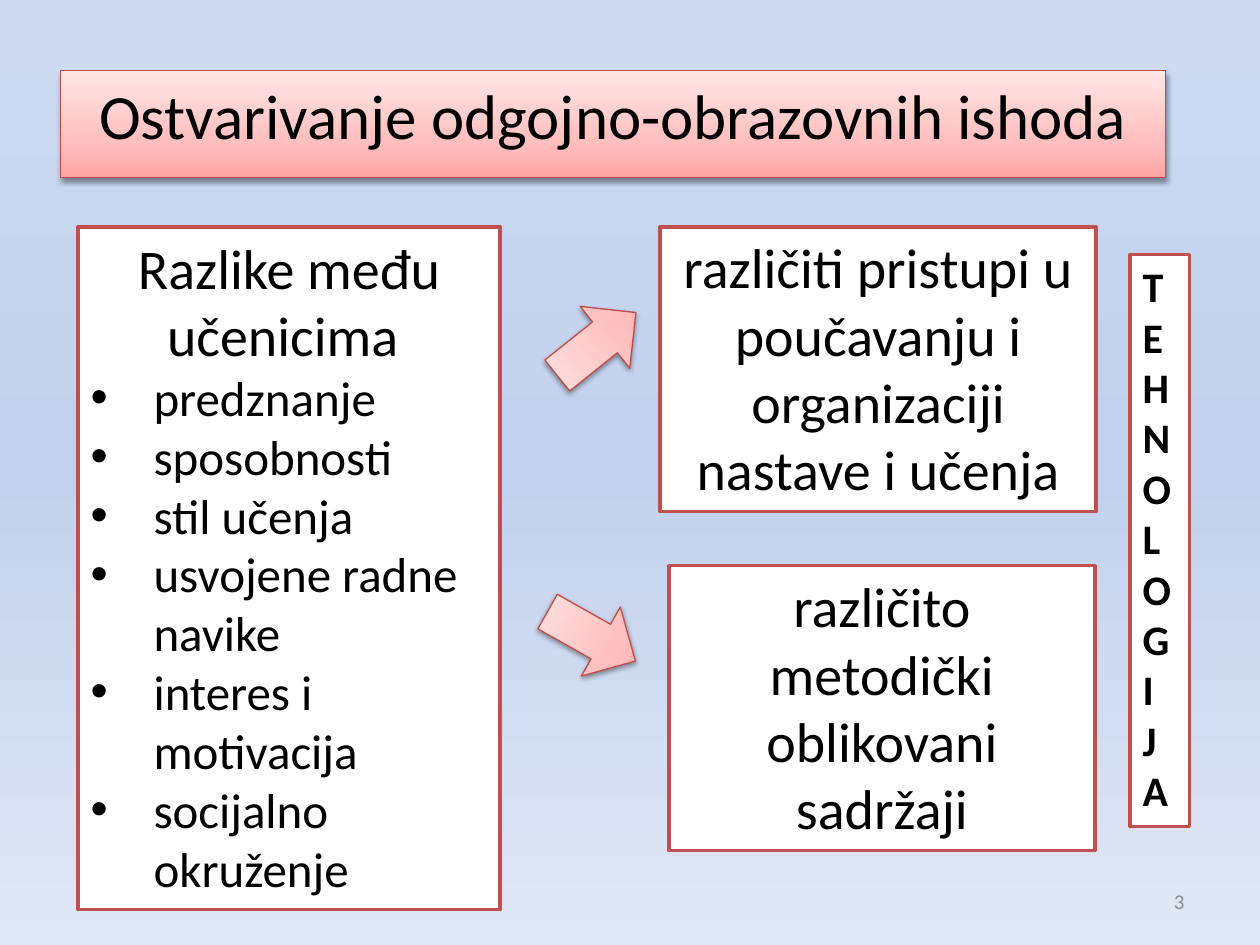
from dataclasses import dataclass
from typing import Optional

from lxml import etree
from pptx import Presentation
from pptx.dml.color import RGBColor
from pptx.enum import shapes, text
from pptx.oxml import parse_xml
from pptx.oxml.ns import nsdecls, qn
from pptx.util import Inches, Pt

Align = text.PP_ALIGN
Kind = shapes.MSO_SHAPE


@dataclass(frozen=True)
class Theme:
    font: str = "Calibri"
    ink: str = "000000"
    gray: str = "8C8C8C"
    white: str = "FFFFFF"
    red: str = "C0504D"
    edge: str = "BF4C48"
    pink: tuple = ((0, "FFA6A5"), (35, "FFC0BF"), (100, "FFE7E7"))
    sky: tuple = ((0, "CDDAF2"), (50, "C2D1ED"), (100, "E1E8F5"))
    title: int = 36
    head: int = 32
    item: int = 28
    side: int = 24
    small: int = 12


@dataclass(frozen=True)
class Box:
    left: float
    top: float
    width: float
    height: float

    def place(self) -> tuple:
        return tuple(map(Inches, (self.left, self.top, self.width, self.height)))


@dataclass(frozen=True)
class Panel:
    box: Box
    words: str
    size: int
    align: Align = Align.CENTER
    bold: bool = False
    items: tuple = ()


@dataclass(frozen=True)
class Arrow:
    box: Box
    turn: float


THEME = Theme()

PANELS = (
    Panel(Box(0.62, 1.8, 3.35, 5.42), "Razlike među učenicima ", THEME.head,
          items=("predznanje", "sposobnosti", "stil učenja", "usvojene radne navike",
                 "interes i motivacija", "socijalno okruženje")),
    Panel(Box(5.31, 4.49, 3.38, 2.26), "različito metodički oblikovani sadržaji", THEME.head),
    Panel(Box(5.24, 1.8, 3.46, 2.26),
          "različiti pristupi u poučavanju i organizaciji nastave i učenja", THEME.head),
    Panel(Box(8.97, 2.02, 0.47, 4.54), "TEHNOLOGI JA", THEME.side, Align.LEFT, True),
)
ARROWS = (
    Arrow(Box(4.42, 2.33, 0.63, 0.8), 231.3),
    Arrow(Box(4.38, 4.65, 0.63, 0.8), 299.4),
)


def blend(root, stops: tuple, angle: int) -> None:
    """Swap the first solid fill under root for a gradient."""
    marks = "".join(f'<a:gs pos="{pos * 1000}"><a:srgbClr val="{tint}"/></a:gs>'
                    for pos, tint in stops)
    solid = root.find(".//" + qn("a:solidFill"))
    solid.getparent().replace(solid, parse_xml(
        f'<a:gradFill {nsdecls("a")} rotWithShape="1"><a:gsLst>{marks}</a:gsLst>'
        f'<a:lin ang="{angle * 60000}" scaled="0"/></a:gradFill>'))


def shade(shape) -> None:
    """Add a soft shadow below the shape."""
    glow = shape._element.spPr.find(qn("a:effectLst"))
    glow.append(parse_xml(
        f'<a:outerShdw {nsdecls("a")} blurRad="{Pt(3.1)}" dist="{Pt(1.6)}" '
        'dir="5400000" rotWithShape="0"><a:srgbClr val="000000">'
        '<a:alpha val="38000"/></a:srgbClr></a:outerShdw>'))


def draw(slide, box: Box, kind: Kind = Kind.RECTANGLE, *, line: str, width: float):
    shape = slide.shapes.add_shape(kind, *box.place())
    shape.shadow.inherit = False
    shape.fill.solid()
    shape.fill.fore_color.rgb = RGBColor.from_string(THEME.white)
    shape.line.color.rgb = RGBColor.from_string(line)
    shape.line.width = Pt(width)
    return shape


def glossy(slide, box: Box, kind: Kind = Kind.RECTANGLE):
    shape = draw(slide, box, kind, line=THEME.edge, width=0.75)
    blend(shape._element.spPr, THEME.pink, 270)
    shade(shape)
    return shape


def write(shape, words: str, *, size: int, align: Align = Align.LEFT, bold: bool = False,
          color: str = THEME.ink, bullet: Optional[str] = None, more: bool = False,
          anchor: text.MSO_ANCHOR = text.MSO_ANCHOR.TOP) -> None:
    frame = shape.text_frame
    frame.word_wrap = True
    frame.vertical_anchor = anchor
    para = frame.add_paragraph() if more else frame.paragraphs[0]
    para.alignment = align
    run = para.add_run()
    run.text = words
    run.font.name = THEME.font
    run.font.size = Pt(size)
    run.font.bold = bold
    run.font.color.rgb = RGBColor.from_string(color)
    if bullet:
        props = para._p.get_or_add_pPr()
        props.set("marL", str(Inches(0.5)))
        props.set("indent", str(Inches(-0.5)))
        etree.SubElement(props, qn("a:buFont")).set("typeface", "Arial")
        etree.SubElement(props, qn("a:buChar")).set("char", bullet)


def panel(slide, part: Panel) -> None:
    shape = draw(slide, part.box, line=THEME.red, width=2)
    write(shape, part.words, size=part.size, align=part.align, bold=part.bold)
    for item in part.items:
        write(shape, item, size=THEME.item, bullet="•", more=True)


def main() -> None:
    deck = Presentation()
    deck.slide_width, deck.slide_height = Inches(10), Inches(7.5)
    slide = deck.slides.add_slide(deck.slide_layouts[6])

    # Background
    slide.background.fill.solid()
    blend(slide._element, THEME.sky, 90)

    # Text panels and the arrows between them
    for part in PANELS:
        panel(slide, part)
    for arrow in ARROWS:
        glossy(slide, arrow.box, Kind.DOWN_ARROW).rotation = arrow.turn

    # Title
    title = glossy(slide, Box(0.48, 0.56, 8.77, 0.85))
    write(title, "Ostvarivanje odgojno-obrazovnih ishoda", size=THEME.title,
          align=Align.CENTER)

    # Slide number
    number = slide.shapes.add_textbox(*Box(7.17, 6.95, 2.33, 0.4).place())
    write(number, "3", size=THEME.small, align=Align.RIGHT, color=THEME.gray,
          anchor=text.MSO_ANCHOR.MIDDLE)

    deck.save("out.pptx")


if __name__ == "__main__":
    main()
